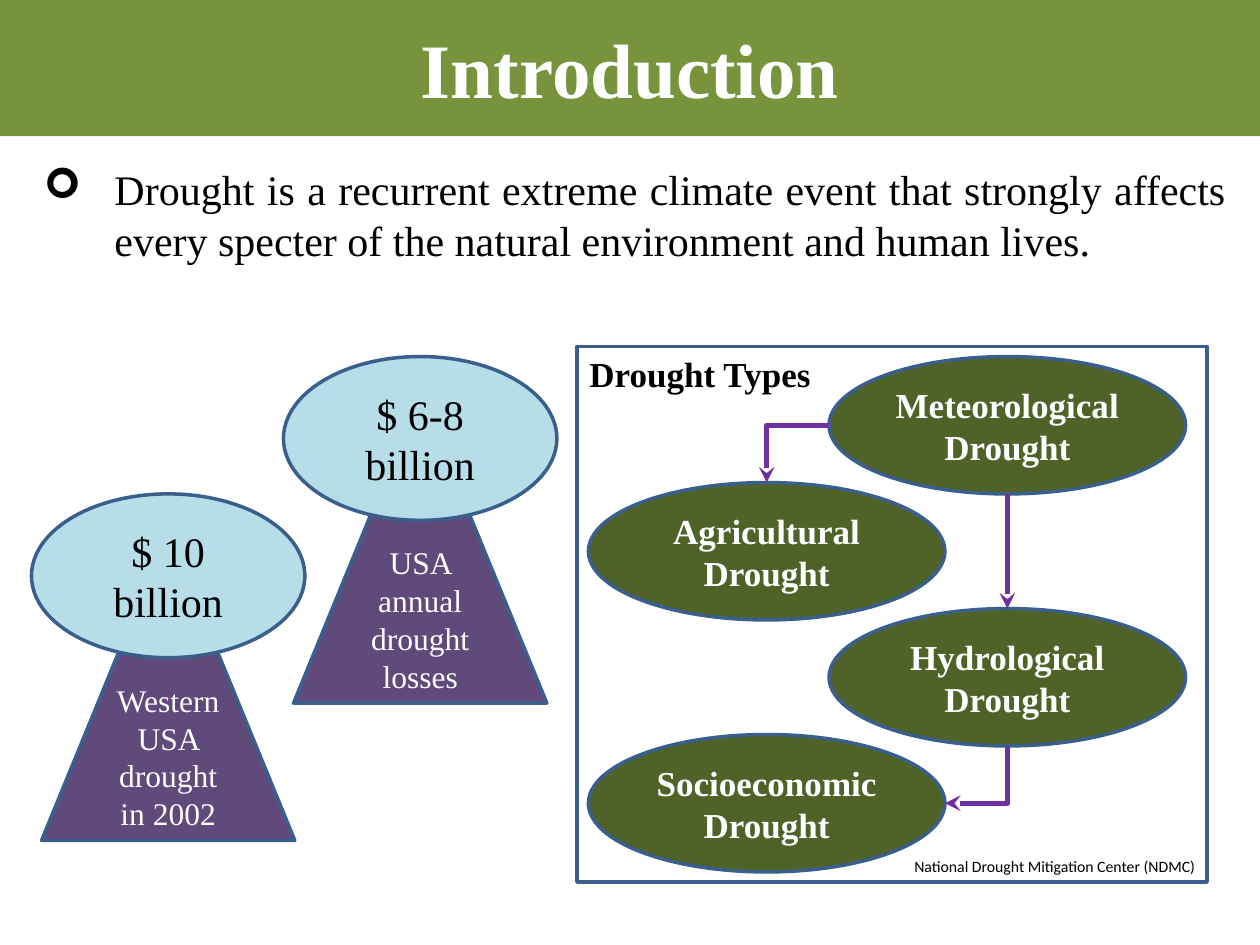
from dataclasses import dataclass

from lxml import etree
from pptx import Presentation
from pptx.dml.color import RGBColor
from pptx.enum.shapes import MSO_CONNECTOR, MSO_SHAPE
from pptx.enum.text import MSO_ANCHOR, PP_ALIGN
from pptx.oxml.ns import qn
from pptx.util import Inches, Pt

RECTANGLE, OVAL, TRAPEZOID = MSO_SHAPE.RECTANGLE, MSO_SHAPE.OVAL, MSO_SHAPE.TRAPEZOID
STRAIGHT, ELBOW = MSO_CONNECTOR.STRAIGHT, MSO_CONNECTOR.ELBOW
LEFT, CENTER, RIGHT, JUSTIFY = PP_ALIGN.LEFT, PP_ALIGN.CENTER, PP_ALIGN.RIGHT, PP_ALIGN.JUSTIFY
TOP, MIDDLE = MSO_ANCHOR.TOP, MSO_ANCHOR.MIDDLE


@dataclass(frozen=True)
class Theme:
    white: str = "FFFFFF"
    black: str = "000000"
    banner: str = "77933C"
    outline: str = "3A5F8C"
    cost: str = "B7DEE8"
    event: str = "604A7B"
    drought: str = "4F6228"
    arrow: str = "7030A0"
    serif: str = "Times New Roman"
    sans: str = "Calibri"
    title_size: int = 44
    body_size: int = 24
    type_size: int = 20
    event_size: int = 18
    source_size: int = 9
    outline_width: int = 2
    arrow_width: int = 3


THEME = Theme()


def write(shape, text, size, color, bold=False, align=CENTER, anchor=MIDDLE, font=THEME.serif):
    frame = shape.text_frame
    frame.word_wrap = True
    frame.vertical_anchor = anchor
    paragraph = frame.paragraphs[0]
    paragraph.alignment = align
    run = paragraph.add_run()
    run.text = text
    run.font.name = font
    run.font.size = Pt(size)
    run.font.bold = bold
    run.font.color.rgb = RGBColor.from_string(color)
    return paragraph


def add_figure(slide, preset, box, fill=None, outline=THEME.outline):
    figure = slide.shapes.add_shape(preset, *map(Inches, box))
    figure.shadow.inherit = False
    if fill:
        figure.fill.solid()
        figure.fill.fore_color.rgb = RGBColor.from_string(fill)
    else:
        figure.fill.background()
    if outline:
        figure.line.color.rgb = RGBColor.from_string(outline)
        figure.line.width = Pt(THEME.outline_width)
    else:
        figure.line.fill.background()
    return figure


def add_arrow(slide, kind, start, end):
    arrow = slide.shapes.add_connector(kind, *map(Inches, (*start, *end)))
    arrow.line.color.rgb = RGBColor.from_string(THEME.arrow)
    arrow.line.width = Pt(THEME.arrow_width)
    properties = arrow._element.spPr
    etree.SubElement(properties.find(qn("a:ln")), qn("a:tailEnd"), type="stealth")
    etree.SubElement(properties, qn("a:effectLst"))
    if kind == ELBOW:
        properties.find(qn("a:prstGeom")).set("prst", "bentConnector2")
    return arrow


def add_down_then_left_arrow(slide, start, end):
    middle_x, middle_y = (start[0] + end[0]) / 2, (start[1] + end[1]) / 2
    half_run, half_drop = (start[0] - end[0]) / 2, (end[1] - start[1]) / 2
    arrow = add_arrow(slide, ELBOW,
                      (middle_x - half_drop, middle_y - half_run),
                      (middle_x + half_drop, middle_y + half_run))
    arrow._element.spPr.find(qn("a:xfrm")).set("rot", str(90 * 60000))


def add_banner(slide, box, text):
    banner = add_figure(slide, RECTANGLE, box, THEME.banner, None)
    write(banner, text, THEME.title_size, THEME.white, bold=True)


def add_statement(slide, box, text):
    statement = slide.shapes.add_textbox(*map(Inches, box))
    paragraph = write(statement, text, THEME.body_size, THEME.black, align=JUSTIFY, anchor=TOP)
    paragraph.space_before = Pt(0.2 * THEME.body_size)
    properties = paragraph._p.get_or_add_pPr()
    indent = Inches(0.56)
    properties.set("marL", str(indent))
    properties.set("indent", str(-indent))
    etree.SubElement(properties, qn("a:buFont"), typeface="Wingdings")
    etree.SubElement(properties, qn("a:buChar"), char="➢")


def add_loss(slide, box, cost, event):
    left, top, width, height = box
    inset, pedestal_height, cost_height = 0.08, 1.75, 1.3
    pedestal = add_figure(
        slide, TRAPEZOID,
        (left + inset, top + height - pedestal_height, width - 2 * inset, pedestal_height),
        THEME.event)
    pedestal.adjustments[0] = 0.41
    write(pedestal, event, THEME.event_size, THEME.white)
    bubble = add_figure(slide, OVAL, (left, top, width, cost_height), THEME.cost)
    write(bubble, cost, THEME.body_size, THEME.black)


def add_drought_types(slide, box, heading, kinds, source):
    left, top, width, height = box
    panel = add_figure(slide, RECTANGLE, box)
    write(panel, heading, THEME.type_size, THEME.black, bold=True, align=LEFT, anchor=TOP)

    oval_width, oval_height = 2.83, 1.09
    columns = (left + 2, left + 0.09)
    rows = [top + 0.08 + step for step in range(len(kinds))]
    for index, kind in enumerate(kinds):
        oval = add_figure(slide, OVAL, (columns[index % 2], rows[index], oval_width, oval_height),
                          THEME.drought)
        write(oval, f"{kind} Drought", THEME.type_size, THEME.white, bold=True)

    right_axis, left_axis = (column + oval_width / 2 for column in columns)
    half = oval_height / 2
    add_arrow(slide, STRAIGHT, (right_axis, rows[0] + oval_height), (right_axis, rows[2]))
    add_down_then_left_arrow(slide, (right_axis, rows[2] + oval_height),
                             (columns[1] + oval_width, rows[3] + half))
    add_arrow(slide, ELBOW, (columns[0], rows[0] + half), (left_axis, rows[1]))

    source_width, source_height = 2.58, 0.25
    credit = slide.shapes.add_textbox(*map(Inches, (
        left + width - source_width, top + height - source_height, source_width, source_height)))
    write(credit, source, THEME.source_size, THEME.black, align=RIGHT, anchor=TOP, font=THEME.sans)


def main():
    deck = Presentation()
    deck.slide_width, deck.slide_height = Inches(10), Inches(7.5)
    slide = deck.slides.add_slide(deck.slide_layouts[6])
    add_banner(slide, (0, 0, 10, 1.08), "Introduction")
    add_statement(slide, (0.25, 1.25, 9.58, 1),
                  "Drought is a recurrent extreme climate event that strongly affects "
                  "every specter of the natural environment and human lives.")
    add_loss(slide, (2.25, 2.83, 2.17, 2.75), "$ 6-8 billion", "USA annual drought losses")
    add_loss(slide, (0.25, 3.92, 2.17, 2.75), "$ 10 billion", "Western USA drought in 2002")
    add_drought_types(slide, (4.58, 2.75, 5, 4.25), "Drought Types",
                      ("Meteorological", "Agricultural", "Hydrological", "Socioeconomic"),
                      "National Drought Mitigation Center (NDMC)")
    deck.save("out.pptx")


if __name__ == "__main__":
    main()
